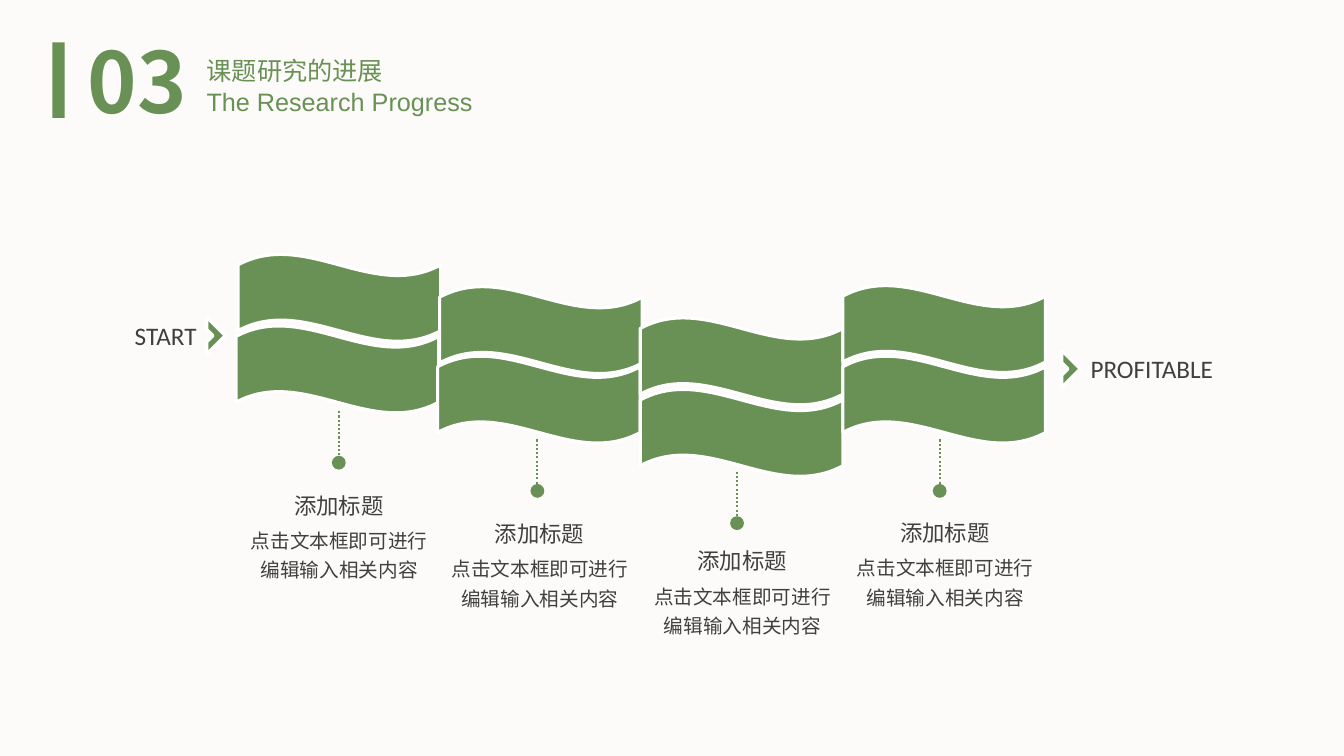
from collections import namedtuple

from lxml import etree
from pptx import Presentation
from pptx.dml.color import RGBColor
from pptx.enum.dml import MSO_LINE
from pptx.enum.shapes import MSO_CONNECTOR, MSO_SHAPE
from pptx.enum.text import MSO_ANCHOR, MSO_AUTO_SIZE, PP_ALIGN
from pptx.oxml.ns import qn
from pptx.util import Emu, Pt

PX = 9144  # 100 px to the inch
GREEN, GRAY, WHITE, PAPER = "699155", "404040", "FFFFFF", "FDFBF9"
CJK, LATIN, LABEL = "Noto Sans CJK SC", "Arial", "Calibri"
LEFT, CENTER, RIGHT = PP_ALIGN.LEFT, PP_ALIGN.CENTER, PP_ALIGN.RIGHT
RECTANGLE, WAVE, HALF_FRAME = MSO_SHAPE.RECTANGLE, MSO_SHAPE.WAVE, MSO_SHAPE.HALF_FRAME
STRAIGHT, DOTTED = MSO_CONNECTOR.STRAIGHT, MSO_LINE.ROUND_DOT
TITLE_ONLY = 5

WAVE_SIZE = (201, 87)
STEM_HEIGHT = 51
CAPTION_TITLE = "添加标题"
CAPTION_BODY = "点击文本框即可进行编辑输入相关内容"

# Each field is a (left, top) position in px
Stage = namedtuple("Stage", "upper lower stem caption")
STAGES = [
    Stage((236, 252), (234, 323), (336, 408), (210, 483)),
    Stage((436, 284), (434, 353), (533, 436), (409, 511)),
    Stage((635, 315), (635, 386), (731, 468), (610, 538)),
    Stage((836, 283), (836, 353), (932, 436), (811, 510)),
]


def px(*lengths):
    return [Emu(length * PX) for length in lengths]


def color(hex_string):
    return RGBColor.from_string(hex_string)


def write(box, text, size, font, ink, align=LEFT, spacing=None, bold=False):
    frame = box.text_frame
    frame.text = text
    frame.auto_size = MSO_AUTO_SIZE.NONE
    frame.vertical_anchor = MSO_ANCHOR.TOP
    para = frame.paragraphs[0]
    para.alignment = align
    if spacing:
        para.line_spacing = spacing
    span = para.runs[0]
    span.font.size = Pt(size)
    span.font.name = font
    span.font.bold = bold
    span.font.color.rgb = color(ink)
    east_asian = etree.Element(qn("a:ea"), typeface=font)
    span.font._element.find(qn("a:latin")).addnext(east_asian)


def add_text(page, bounds, text, size, font, ink, **style):
    box = page.shapes.add_textbox(*px(*bounds))
    box.text_frame.word_wrap = True
    write(box, text, size, font, ink, **style)


def add_green_shape(page, kind, bounds, outlined=True, rotation=0):
    shape = page.shapes.add_shape(kind, *px(*bounds))
    shape.shadow.inherit = False
    shape.rotation = rotation
    shape.fill.solid()
    shape.fill.fore_color.rgb = color(GREEN)
    if outlined:
        shape.line.color.rgb = color(WHITE)
        shape.line.width = Pt(2.25)
    else:
        shape.line.fill.background()


def add_stem(page, left, top):
    """Draw a dotted drop line that ends in a round dot."""
    stem = page.shapes.add_connector(STRAIGHT, *px(left, top, left, top + STEM_HEIGHT))
    stem.line.color.rgb = color(GREEN)
    stem.line.width = Pt(1.5)
    stem.line.dash_style = DOTTED
    properties = stem._element.spPr
    outline = properties.find(qn("a:ln"))
    etree.SubElement(outline, qn("a:tailEnd"), type="oval", w="lg", len="lg")
    etree.SubElement(properties, qn("a:effectLst"))


def add_caption(page, left, top):
    add_text(page, (left, top, 252, 37), CAPTION_TITLE, 16, CJK, GRAY, align=CENTER)
    add_text(page, (left + 26, top + 31, 201, 69), CAPTION_BODY, 14, CJK, GRAY,
             align=CENTER, spacing=1.25)


def add_heading(page):
    add_green_shape(page, RECTANGLE, (52, 42, 12, 75), outlined=False)
    add_text(page, (52, 24, 168, 111), "03", 60, CJK, GREEN, align=CENTER, bold=True)
    title = page.shapes.title
    title.left, title.top, title.width, title.height = px(195, 20, 197, 62)
    title.text_frame.word_wrap = False
    write(title, "课题研究的进展", 18, CJK, GREEN, spacing=2.0)
    add_text(page, (195, 81, 549, 40), "The Research Progress", 18, LATIN, GREEN)


def add_endpoint(page, label, label_bounds, chevron_position):
    add_text(page, label_bounds, label, 18, LABEL, GRAY, align=RIGHT)
    add_green_shape(page, HALF_FRAME, (*chevron_position, 26, 26), rotation=135)


def main():
    deck = Presentation()
    deck.slide_width, deck.slide_height = px(1333, 750)
    page = deck.slides.add_slide(deck.slide_layouts[TITLE_ONLY])
    page.background.fill.solid()
    page.background.fill.fore_color.rgb = color(PAPER)

    add_heading(page)
    for stage in STAGES:
        for position in (stage.upper, stage.lower):
            add_green_shape(page, WAVE, (*position, *WAVE_SIZE))
    for stage in STAGES:
        add_stem(page, *stage.stem)
        add_caption(page, *stage.caption)
    add_endpoint(page, "START", (121, 313, 84, 40), (192, 320))
    add_endpoint(page, "PROFITABLE", (1064, 346, 149, 40), (1040, 353))

    deck.save("out.pptx")


if __name__ == "__main__":
    main()
